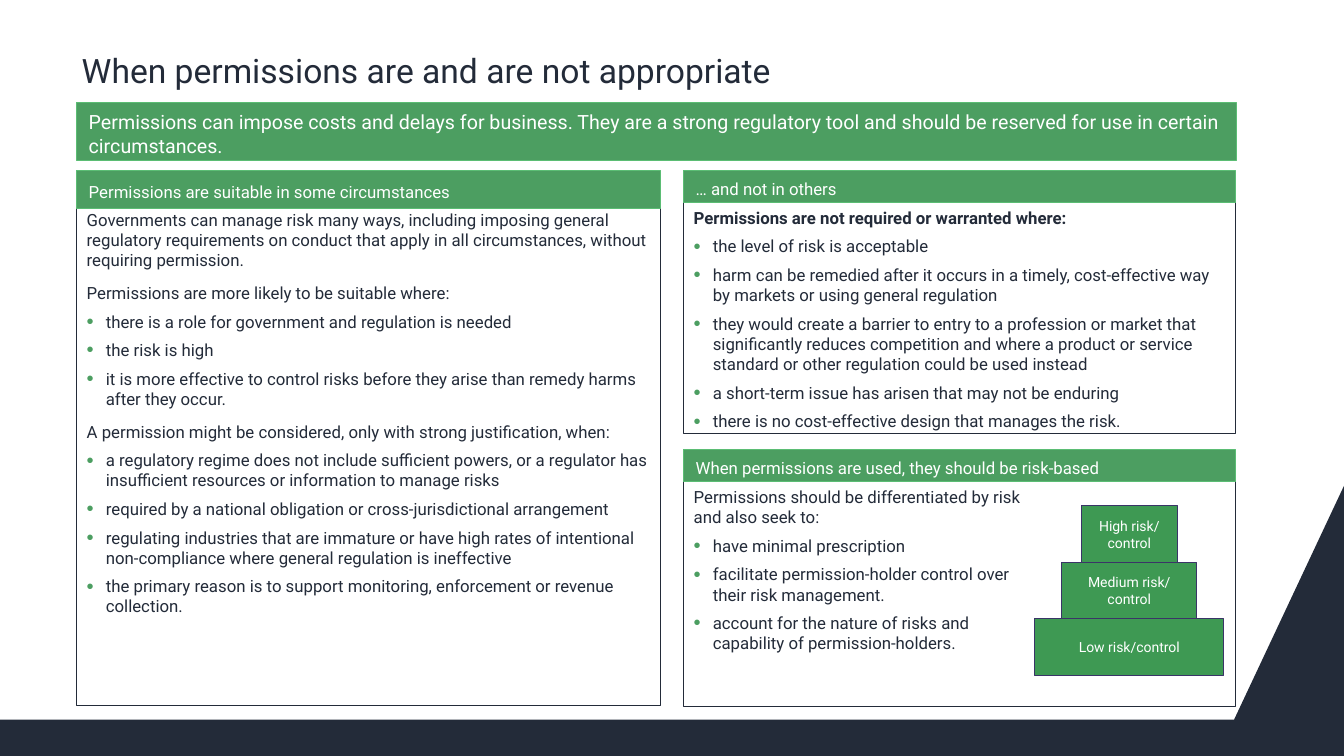
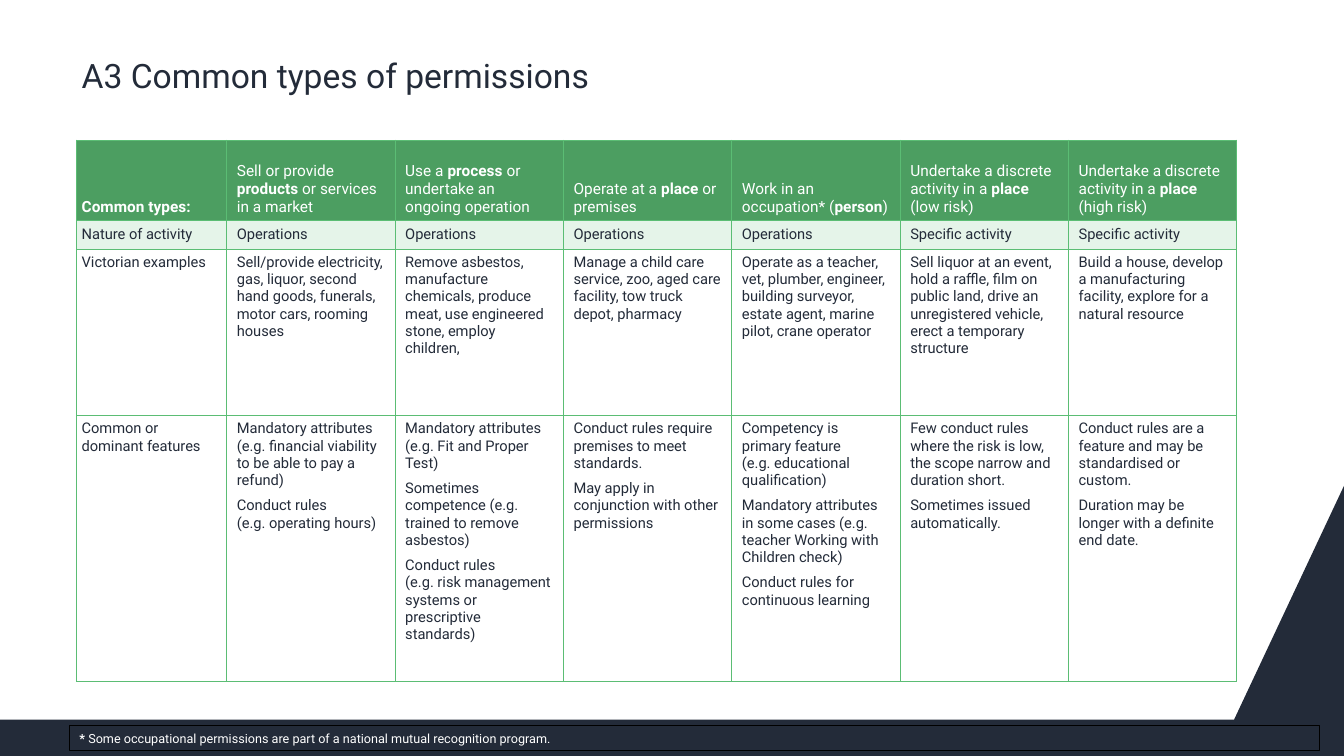
from pptx import Presentation
from pptx.dml.color import RGBColor
from pptx.enum.shapes import MSO_SHAPE
from pptx.enum.text import MSO_ANCHOR, MSO_AUTO_SIZE, PP_ALIGN
from pptx.oxml import parse_xml
from pptx.oxml.ns import nsdecls
from pptx.util import Inches, Pt

NAVY = RGBColor(0x23, 0x2B, 0x39)
GREEN = RGBColor(0x4C, 0x9E, 0x61)
EDGE = RGBColor(0x5B, 0xBD, 0x74)
PALE = RGBColor(0xE5, 0xF4, 0xE9)
STEP = RGBColor(0x3E, 0x99, 0x53)
PURPLE = RGBColor(0x3A, 0x34, 0x67)
WHITE = RGBColor(0xFF, 0xFF, 0xFF)
BLACK = RGBColor(0, 0, 0)

FONT = "Roboto"
LEFT, WIDE = 0.76, 11.5
BAR = (0.12, 0.08, 0.12, 0.04)
PAD = (0.1, 0.05, 0.1, 0.05)


def write(frame, lines, size, color, before=0, after=0, align=PP_ALIGN.LEFT):
    """Fill a text frame: "• " starts a bullet, |bars| enclose bold words."""
    for i, line in enumerate(lines):
        para = frame.paragraphs[0] if i == 0 else frame.add_paragraph()
        bullet = line.startswith("• ")
        line = line.removeprefix("• ")
        if "|" in line:
            for j, part in enumerate(line.split("|")):
                run = para.add_run()
                run.text = part
                run.font.bold = j % 2 == 1
        else:
            para.text = line
        props = para._p.get_or_add_pPr()
        indent = Inches(0.19) if bullet else 0
        props.set("marL", str(indent))
        props.set("indent", str(-indent))
        marks = ([f'<a:buClr {nsdecls("a")}><a:srgbClr val="{GREEN}"/></a:buClr>',
                  f'<a:buSzPct {nsdecls("a")} val="120000"/>',
                  f'<a:buChar {nsdecls("a")} char="•"/>'] if bullet
                 else [f'<a:buNone {nsdecls("a")}/>'])
        for mark in marks:
            props.append(parse_xml(mark))
        para.alignment = align
        para.space_before = Pt(0 if bullet else before)
        para.space_after = Pt(after)
        font = para.font
        font.name, font.size, font.bold = FONT, Pt(size), False
        font.color.rgb = color


def box(slide, at, fill, line, pad=PAD, anchor=MSO_ANCHOR.MIDDLE, holder=None):
    """Style a placeholder, or a new rectangle, and return its text frame."""
    at = [Inches(n) for n in at]
    shape = holder or slide.shapes.add_shape(MSO_SHAPE.RECTANGLE, *at)
    shape.left, shape.top, shape.width, shape.height = at
    shape.shadow.inherit = False
    if fill is None:
        shape.fill.background()
    else:
        shape.fill.solid()
        shape.fill.fore_color.rgb = fill
    if line is None:
        shape.line.fill.background()
    else:
        shape.line.color.rgb = line
        shape.line.width = Pt(0.75)
    frame = shape.text_frame
    frame.word_wrap = True
    frame.auto_size = MSO_AUTO_SIZE.NONE
    frame.vertical_anchor = anchor
    (frame.margin_left, frame.margin_top,
     frame.margin_right, frame.margin_bottom) = [Inches(n) for n in pad]
    return frame


deck = Presentation()
deck.slide_width, deck.slide_height = Inches(13.33), Inches(7.5)
use = deck.slides.add_slide(deck.slide_layouts[4])
types = deck.slides.add_slide(deck.slide_layouts[5])

# Navy band, shared through the master
pen = use.shapes.build_freeform(0, Inches(7.14), scale=1.0)
pen.add_line_segments([(Inches(x), Inches(y)) for x, y in
                       [(12.24, 7.14), (13.33, 4.82), (13.33, 7.5), (0, 7.5)]])
band = pen.convert_to_shape()
band.fill.solid()
band.fill.fore_color.rgb = NAVY
band.line.fill.background()
band.shadow.inherit = False
deck.slide_master.shapes.element.append(band.element)

# Titles
for slide, title, anchor in [
        (use, "When permissions are and are not appropriate", MSO_ANCHOR.MIDDLE),
        (types, "A3 Common types of permissions", MSO_ANCHOR.BOTTOM)]:
    frame = box(slide, (0.77, 0.44, WIDE, 0.56), None, None,
                (0.04, 0.05, 0.04, 0.05), anchor, slide.shapes.title)
    write(frame, [title], 24, NAVY)
    frame.paragraphs[0].line_spacing = 0.9

# Slide 1: key message and three headed panels
holders = {item.placeholder_format.idx: item for item in use.placeholders}
frame = box(use, (LEFT, 1.02, WIDE, 0.57), GREEN, EDGE, BAR, holder=holders[4])
write(frame, ["Permissions can impose costs and delays for business. They are a strong "
              "regulatory tool and should be reserved for use in certain circumstances."],
      14, WHITE)

panels = [
    ("Permissions are suitable in some circumstances",
     (LEFT, 1.69, 5.79, 0.38), (LEFT, 2.03, 5.79, 4.97), 0.1,
     ["Governments can manage risk many ways, including imposing general regulatory "
      "requirements on conduct that apply in all circumstances, without requiring permission.",
      "Permissions are more likely to be suitable where:",
      "• there is a role for government and regulation is needed",
      "• the risk is high",
      "• it is more effective to control risks before they arise than remedy harms "
      "after they occur.",
      "A permission might be considered, only with strong justification, when:",
      "• a regulatory regime does not include sufficient powers, or a regulator has "
      "insufficient resources or information to manage risks",
      "• required by a national obligation or cross-jurisdictional arrangement",
      "• regulating industries that are immature or have high rates of intentional "
      "non-compliance where general regulation is ineffective",
      "• the primary reason is to support monitoring, enforcement or revenue collection."]),
    ("… and not in others",
     (6.78, 1.69, 5.47, 0.32), (6.78, 2.01, 5.47, 2.29), 0.1,
     ["|Permissions are not required or warranted where:|",
      "• the level of risk is acceptable",
      "• harm can be remedied after it occurs in a timely, cost-effective way by markets "
      "or using general regulation",
      "• they would create a barrier to entry to a profession or market that significantly "
      "reduces competition and where a product or service standard or other regulation "
      "could be used instead",
      "• a short-term issue has arisen that may not be enduring",
      "• there is no cost-effective design that manages the risk."]),
    ("When permissions are used, they should be risk-based",
     (6.78, 4.46, 5.47, 0.32), (6.78, 4.78, 5.47, 2.23), 1.97,
     ["Permissions should be differentiated by risk and also seek to:",
      "• have minimal prescription",
      "• facilitate permission-holder control over their risk management.",
      "• account for the nature of risks and capability of permission-holders."]),
]
for idx, (head, top, body, right, lines) in enumerate(panels, 1):
    frame = box(use, body, None, NAVY, (0.1, 0.05, right, 0.05),
                MSO_ANCHOR.TOP, holders[idx])
    write(frame, lines, 12, NAVY, before=3, after=6)
    write(box(use, top, GREEN, EDGE, BAR), [head], 12, WHITE)

# Risk steps, from the base up
steps = [("Low risk/control", 1.88), ("Medium risk/ control", 1.34),
         ("High risk/ control", 0.95)]
for i, (label, width) in enumerate(steps):
    at = (11.2 - width / 2, 6.14 - 0.56 * i, width, 0.56)
    write(box(use, at, STEP, PURPLE), [label], 10, WHITE, align=PP_ALIGN.CENTER)

# Slide 2: table of types
rows = [
    ["|Common types:|",
     "Sell or provide |products| or services in a market",
     "Use a |process| or undertake an ongoing operation",
     "Operate at a |place| or premises",
     "Work in an occupation* (|person|)",
     "Undertake a discrete activity in a |place| (low risk)",
     "Undertake a discrete activity in a |place| (high risk)"],
    ["Nature of activity"] + ["Operations"] * 4 + ["Specific activity"] * 2,
    ["Victorian examples",
     "Sell/provide electricity, gas, liquor, second hand goods, funerals, motor cars, "
     "rooming houses",
     "Remove asbestos, manufacture chemicals, produce meat, use engineered stone, "
     "employ children,",
     "Manage a child care service, zoo, aged care facility, tow truck depot, pharmacy",
     "Operate as a teacher, vet, plumber, engineer, building surveyor, estate agent, "
     "marine pilot, crane operator",
     "Sell liquor at an event, hold a raffle, film on public land, drive an unregistered "
     "vehicle, erect a temporary structure",
     "Build a house, develop a manufacturing facility, explore for a natural resource"],
    ["Common or dominant features",
     "Mandatory attributes (e.g. financial viability to be able to pay a refund)\n"
     "Conduct rules \v(e.g. operating hours)",
     "Mandatory attributes (e.g. Fit and Proper Test)\n"
     "Sometimes competence (e.g. trained to remove asbestos)\n"
     "Conduct rules \v(e.g. risk management systems or prescriptive standards)",
     "Conduct rules require premises to meet standards.\n"
     "May apply in conjunction with other permissions",
     "Competency is primary feature \v(e.g. educational qualification)\n"
     "Mandatory attributes in some cases (e.g. teacher Working with Children check)\n"
     "Conduct rules for continuous learning",
     "Few conduct rules where the risk is low, the scope narrow and duration short.\n"
     "Sometimes issued automatically.",
     "Conduct rules are a feature and may be standardised or custom.\n"
     "Duration may be longer with a definite end date."],
]
fills = [GREEN, PALE, None, None]
table = types.shapes.add_table(4, 7, Inches(LEFT), Inches(1.39),
                               Inches(WIDE), Inches(5.37)).table
table.first_row = table.horz_banding = False
for col, width in zip(table.columns, [1.49] + [1.67] * 6):
    col.width = Inches(width)
for r, (row, height) in enumerate(zip(table.rows, [0.8, 0.28, 1.65, 2.64])):
    row.height = Inches(height)
    for c, cell in enumerate(row.cells):
        props = cell._tc.get_or_add_tcPr()
        for side in "LRTB":
            props.append(parse_xml(
                f'<a:ln{side} {nsdecls("a")} w="{Pt(0.75)}"><a:solidFill>'
                f'<a:srgbClr val="{EDGE}"/></a:solidFill></a:ln{side}>'))
        if fills[r] is None:
            cell.fill.background()
        else:
            cell.fill.solid()
            cell.fill.fore_color.rgb = fills[r]
        cell.margin_left = cell.margin_right = Inches(0.1 if c else 0.05)
        cell.margin_top = cell.margin_bottom = Inches(0.05)
        cell.vertical_anchor = MSO_ANCHOR.TOP if r else MSO_ANCHOR.BOTTOM
        write(cell.text_frame, rows[r][c].split("\n"), 10.5 if r else 11,
              NAVY if r else WHITE, after=6)

# Footnote
frame = box(types, (0.69, 7.2, 12.4, 0.25), None, BLACK)
write(frame, ["|* |Some occupational permissions are part of a national "
              "mutual recognition program."], 9, WHITE)

deck.save("out.pptx")
